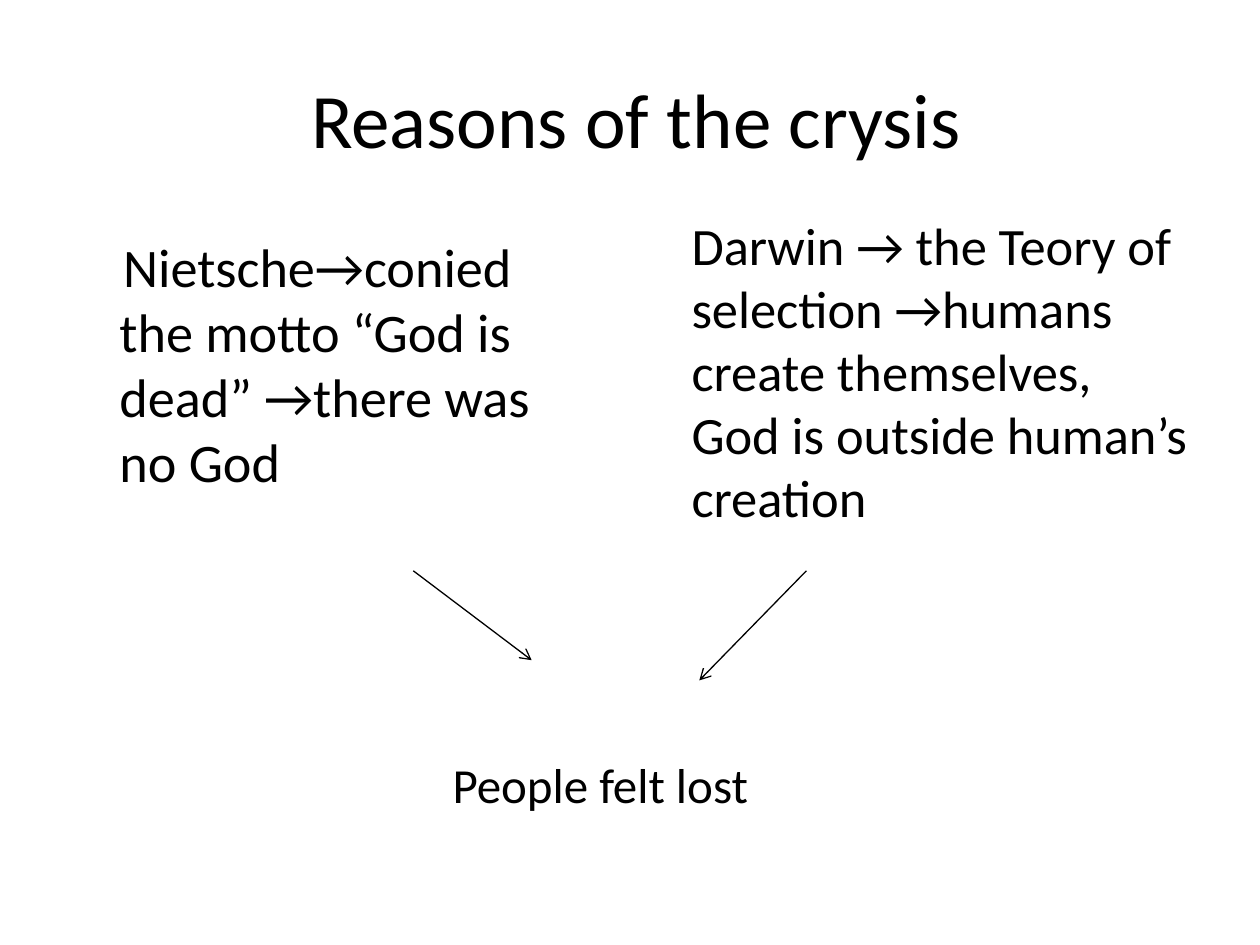
from pptx import Presentation
from pptx.dml.color import RGBColor
from pptx.enum.shapes import MSO_CONNECTOR
from pptx.enum.text import MSO_ANCHOR, PP_ALIGN
from pptx.oxml.ns import qn
from pptx.util import Inches, Pt
from lxml.etree import SubElement

FONT = "Calibri"
BLACK = RGBColor(0, 0, 0)

TITLE = ("Reasons of the crysis", (0.55, 0.31, 9, 1.25),
         dict(size=44, align=PP_ALIGN.CENTER, anchor=MSO_ANCHOR.MIDDLE))
TEXTS = [
    ("Nietsche→conied the motto “God is dead” →there was no God",
     (0.47, 1.8, 3.87, 3.17), dict(size=31, margin=0.38, indent=0.03)),
    ("Darwin → the Teory of selection →humans create themselves, "
     "God is outside human’s creation",
     (5.39, 1.64, 4.14, 2.96), dict(size=30)),
    ("People felt lost", (0.7, 5.94, 8.13, 0.57),
     dict(size=28, align=PP_ALIGN.CENTER)),
]
ARROWS = [((3.28, 4.53), (4.22, 5.24)), ((6.4, 4.53), (5.55, 5.4))]


def write_text(shape, text, size, align=PP_ALIGN.LEFT, anchor=MSO_ANCHOR.TOP,
               margin=0, indent=0):
    frame = shape.text_frame
    frame.word_wrap = True
    frame.vertical_anchor = anchor
    frame.text = text
    paragraph = frame.paragraphs[0]
    paragraph.alignment = align
    properties = paragraph._p.get_or_add_pPr()
    properties.set("marL", str(Inches(margin)))
    properties.set("indent", str(Inches(indent)))
    font = paragraph.runs[0].font
    font.name, font.size, font.color.rgb = FONT, Pt(size), BLACK


def add_arrow(slide, start, end):
    points = [Inches(value) for value in start + end]
    arrow = slide.shapes.add_connector(MSO_CONNECTOR.STRAIGHT, *points)
    arrow.line.color.rgb = BLACK
    arrow.line.width = Pt(0.75)
    SubElement(arrow.line._get_or_add_ln(), qn("a:tailEnd"), type="arrow")
    SubElement(arrow._element.spPr, qn("a:effectLst"))


def main():
    presentation = Presentation()
    presentation.slide_width, presentation.slide_height = Inches(10), Inches(7.5)
    slide = presentation.slides.add_slide(presentation.slide_layouts[5])

    text, box, text_format = TITLE
    title = slide.shapes.title
    title.left, title.top, title.width, title.height = map(Inches, box)
    write_text(title, text, **text_format)

    for text, box, text_format in TEXTS:
        write_text(slide.shapes.add_textbox(*map(Inches, box)), text, **text_format)
    for start, end in ARROWS:
        add_arrow(slide, start, end)

    presentation.save("out.pptx")


if __name__ == "__main__":
    main()
